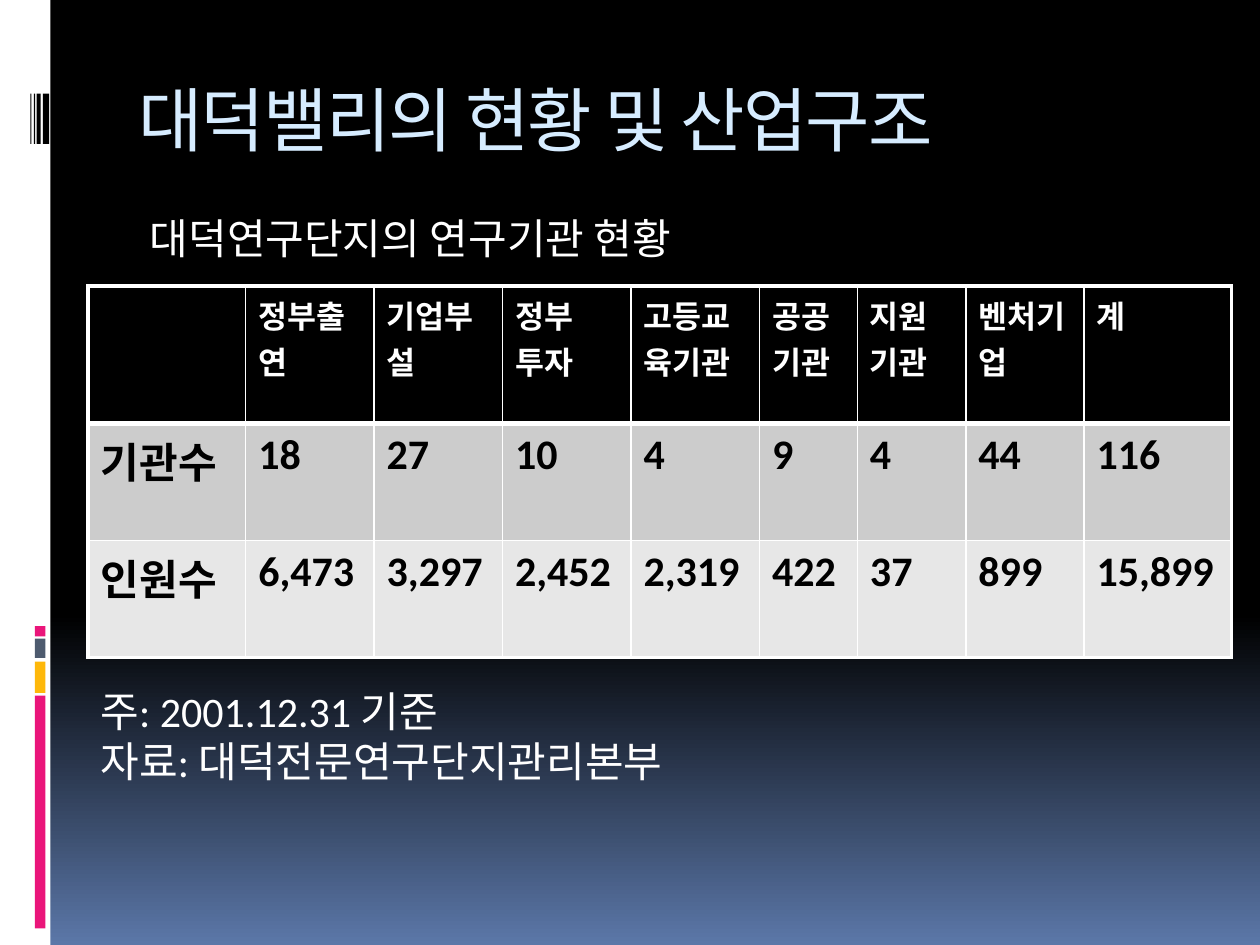
from typing import NamedTuple

from lxml.etree import SubElement
from pptx import Presentation
from pptx.dml.color import RGBColor
from pptx.enum.shapes import MSO_SHAPE
from pptx.enum.text import MSO_ANCHOR, MSO_AUTO_SIZE
from pptx.oxml.ns import qn
from pptx.util import Pt

COLORS = {
    "white": "FFFFFF", "black": "000000", "pink": "EA157A", "gold": "FEB80A",
    "slate": "4E5B6F", "blue": "5B77A8", "sky": "D6ECFF",
    "gray": "CCCCCC", "pale": "E7E7E7",
}


class Bar(NamedTuple):
    left: float
    top: float
    width: float
    height: float
    color: str


class Label(NamedTuple):
    left: float
    top: float
    width: float
    height: float
    lines: list[str]
    size: float = 24
    font: str = "Calibri"
    color: str = "white"
    wrap: bool = False
    gap: int = 0


class Row(NamedTuple):
    height: float
    fill: str
    color: str
    size: float
    cells: list[str]


BARS = [
    Bar(0, 0, 28.8, 540, "white"),
    Bar(20, 397.5, 6, 133, "pink"),
    Bar(20, 378, 6, 18, "gold"),
    Bar(20, 365, 6, 11, "slate"),
    Bar(20, 357.8, 6, 5.8, "pink"),
    Bar(24.5, 53.5, 3.6, 28.8, "black"),
    Bar(21, 53.5, 2.2, 28.8, "black"),
    Bar(19.4, 53.5, 0.7, 28.8, "black"),
    Bar(17.3, 53.5, 0.7, 28.8, "black"),
]
LABELS = [
    Label(72, 40.3, 612, 72, ["대덕밸리의 현황 및 산업구조"],
          40, "Noto Sans Mono", "sky", True, -100),
    Label(78.5, 118, 339, 36, ["대덕연구단지의 연구기관 현황"]),
    Label(50.4, 388, 365, 65.5,
          ["주: 2001.12.31 기준", "자료: 대덕전문연구단지관리본부"]),
]
WIDTHS = [90, *[73.4] * 4, 56, 62, 67.5, 84.2]
ROWS = [
    Row(78.5, "black", "white", 18,
        ["", "정부출연", "기업부설", "정부 투자", "고등교육기관",
         "공공기관", "지원기관", "벤처기업", "계"]),
    Row(67, "gray", "black", 24,
        ["기관수", "18", "27", "10", "4", "9", "4", "44", "116"]),
    Row(67, "pale", "black", 24,
        ["인원수", "6,473", "3,297", "2,452", "2,319", "422", "37", "899", "15,899"]),
]


def rgb(name: str) -> RGBColor:
    return RGBColor.from_string(COLORS[name])


def style(font, name: str, size: float, color: str, bold: bool = False) -> None:
    font.name, font.size, font.bold = name, Pt(size), bold
    font.color.rgb = rgb(color)


def paint(slide) -> None:
    """Fill the background: black down to 65 %, then fading to blue."""
    fill = slide.background.fill
    fill.gradient()
    fill.gradient_angle = 270
    for stop, pos, name in zip(fill.gradient_stops, (0.65, 1), ("black", "blue")):
        stop.position = pos
        stop.color.rgb = rgb(name)


def add_bar(slide, bar: Bar) -> None:
    shape = slide.shapes.add_shape(MSO_SHAPE.RECTANGLE, *map(Pt, bar[:4]))
    shape.shadow.inherit = False
    shape.fill.solid()
    shape.fill.fore_color.rgb = rgb(bar.color)
    shape.line.fill.background()


def add_label(slide, label: Label) -> None:
    frame = slide.shapes.add_textbox(*map(Pt, label[:4])).text_frame
    frame.word_wrap = label.wrap
    frame.auto_size = MSO_AUTO_SIZE.NONE if label.wrap else MSO_AUTO_SIZE.SHAPE_TO_FIT_TEXT
    frame.vertical_anchor = MSO_ANCHOR.TOP
    frame.text = "\n".join(label.lines)
    for para in frame.paragraphs:
        for run in para.runs:
            style(run.font, label.font, label.size, label.color)
            if label.gap:
                run.font._element.set("spc", str(label.gap))


def set_edges(cell, edges: dict[str, float]) -> None:
    """Draw white cell borders; they must precede the fill in the XML."""
    props = cell._tc.get_or_add_tcPr()
    for side, width in edges.items():
        line = SubElement(props, qn(f"a:ln{side}"), w=str(Pt(width)))
        fill = SubElement(line, qn("a:solidFill"))
        SubElement(fill, qn("a:srgbClr"), val=COLORS["white"])


def add_grid(slide) -> None:
    size = sum(WIDTHS), sum(row.height for row in ROWS)
    table = slide.shapes.add_table(
        len(ROWS), len(WIDTHS), Pt(50.4), Pt(163.4), *map(Pt, size)).table
    for col, width in zip(table.columns, WIDTHS):
        col.width = Pt(width)
    rules = [2.25, 3, 1, 2.25]
    posts = [2.25, *[1] * (len(WIDTHS) - 1), 2.25]
    for r, row in enumerate(ROWS):
        table.rows[r].height = Pt(row.height)
        for c, text in enumerate(row.cells):
            cell = table.cell(r, c)
            set_edges(cell, {"L": posts[c], "R": posts[c + 1],
                             "T": rules[r], "B": rules[r + 1]})
            cell.fill.solid()
            cell.fill.fore_color.rgb = rgb(row.fill)
            cell.text_frame.text = text
            for run in cell.text_frame.paragraphs[0].runs:
                style(run.font, "Calibri", row.size, row.color, True)


def main() -> None:
    deck = Presentation()
    deck.slide_width, deck.slide_height = Pt(720), Pt(540)
    slide = deck.slides.add_slide(deck.slide_layouts[6])
    paint(slide)
    for bar in BARS:
        add_bar(slide, bar)
    for label in LABELS:
        add_label(slide, label)
    add_grid(slide)
    deck.save("out.pptx")


if __name__ == "__main__":
    main()
